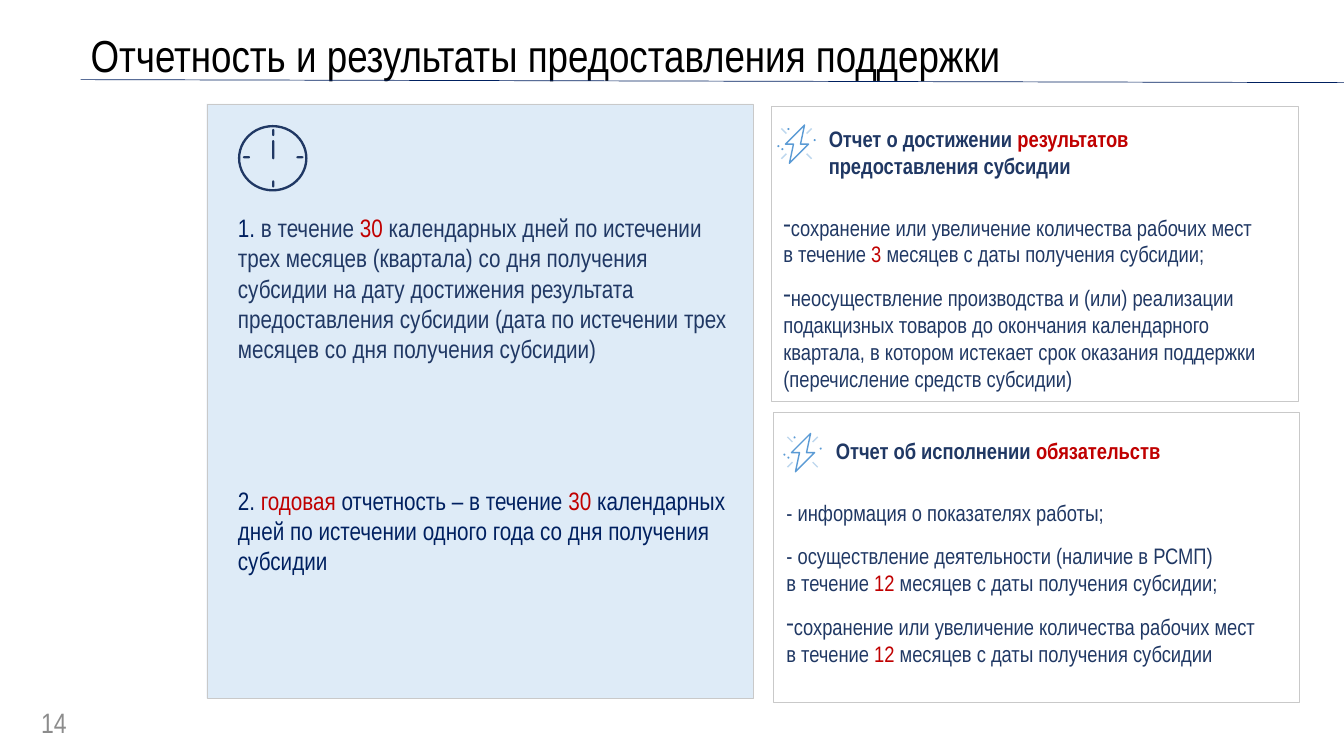
from dataclasses import dataclass

from lxml.etree import SubElement
from pptx import Presentation
from pptx.dml.color import RGBColor
from pptx.enum.shapes import MSO_CONNECTOR, MSO_SHAPE
from pptx.enum.text import MSO_ANCHOR, PP_ALIGN
from pptx.oxml.ns import qn
from pptx.util import Inches, Pt


@dataclass(frozen=True)
class Theme:
    font: str = "Arial Narrow"
    title: str = "000000"
    navy: str = "002060"
    ink: str = "203864"
    accent: str = "C00000"
    number: str = "8C8C8C"
    border: str = "C9C9C9"
    panel: str = "DEEBF7"
    white: str = "FFFFFF"
    bolt: str = "5B9BD5"
    ray: str = "BDD7EE"
    title_size: int = 32
    number_size: int = 20
    term_size: int = 18
    report_size: int = 16


THEME = Theme()
FLUSH = {"margin_left": 0}


def set_all(target, values):
    for name, value in values.items():
        setattr(target, name, value)


def add_solid(slide, preset, box, fill, border=None):
    shape = slide.shapes.add_shape(preset, *map(Inches, box))
    shape.shadow.inherit = False
    shape.fill.solid()
    shape.fill.fore_color.rgb = RGBColor.from_string(fill)
    if border:
        shape.line.color.rgb = RGBColor.from_string(border)
        shape.line.width = Pt(0.25)
    else:
        shape.line.fill.background()
    return shape


def add_line(slide, start, end, color, width):
    line = slide.shapes.add_connector(
        MSO_CONNECTOR.STRAIGHT, *map(Inches, (*start, *end)))
    line.line.color.rgb = RGBColor.from_string(color)
    line.line.width = Pt(width)
    SubElement(line._element.spPr, qn("a:effectLst"))


def add_dash_bullet(paragraph):
    properties = paragraph._p.get_or_add_pPr()
    set_all_xml = {"marL": "0", "indent": "0"}
    for name, value in set_all_xml.items():
        properties.set(name, value)
    SubElement(properties, qn("a:buFontTx"))
    SubElement(properties, qn("a:buChar")).set("char", "-")


def add_runs(paragraph, runs, size, bold):
    for text, color in runs:
        for index, part in enumerate(text.split("\n")):
            if index:
                paragraph.add_line_break()
            run = paragraph.add_run()
            run.text = part
            set_all(run.font, {"name": THEME.font, "size": Pt(size), "bold": bold})
            run.font.color.rgb = RGBColor.from_string(color)


def add_text(slide, box, paragraphs, size, bold=False, frame_format=None,
             paragraph_format=None, bulleted=(), gap=0):
    """Write paragraphs of (text, colour) runs; gap is the space between them."""
    frame = slide.shapes.add_textbox(*map(Inches, box)).text_frame
    set_all(frame, {"word_wrap": True, **(frame_format or {})})
    for index, runs in enumerate(paragraphs):
        paragraph = frame.add_paragraph() if index else frame.paragraphs[0]
        if index in bulleted:
            add_dash_bullet(paragraph)
        if index:
            paragraph.space_before = Pt(gap)
        set_all(paragraph, paragraph_format or {})
        add_runs(paragraph, runs, size, bold)


def add_clock(slide, left, top):
    width, height, stroke = 0.69, 0.66, 0.02
    ring = add_solid(slide, MSO_SHAPE.DONUT, (left, top, width, height), THEME.ink)
    ring.adjustments[0] = 0.035
    ticks_and_hand = [
        (0.34, 0.04, stroke, 0.07), (0.34, 0.55, stroke, 0.07),
        (0.58, 0.31, 0.07, stroke), (0.05, 0.31, 0.07, stroke),
        (0.34, 0.15, stroke, 0.19),
    ]
    for x, y, w, h in ticks_and_hand:
        mark = add_solid(slide, MSO_SHAPE.ROUNDED_RECTANGLE,
                         (left + x, top + y, w, h), THEME.ink)
        mark.adjustments[0] = 0.5


def add_bolt(slide, left, top):
    def place(x, y):
        return left + x, top + y

    corners = [(0.27, 0.01), (0.08, 0.2), (0.16, 0.2),
               (0.12, 0.39), (0.31, 0.2), (0.23, 0.2)]
    points = [tuple(map(Inches, place(*corner))) for corner in corners]
    builder = slide.shapes.build_freeform(*points[0])
    builder.add_line_segments(points[1:], close=True)
    bolt = builder.convert_to_shape()
    bolt.shadow.inherit = False
    bolt.fill.background()
    bolt.line.color.rgb = RGBColor.from_string(THEME.bolt)
    bolt.line.width = Pt(1)

    center_x, center_y = 0.19, 0.195
    for side_x in (-1, 1):
        for side_y in (-1, 1):
            inner, outer = (place(center_x + side_x * reach, center_y + side_y * reach)
                            for reach in (0.1, 0.15))
            add_line(slide, inner, outer, THEME.ray, 1)
    for x, y in [(0.04, 0.24), (0, 0.21), (0.36, 0.15), (0.1, 0.04)]:
        add_solid(slide, MSO_SHAPE.OVAL, (*place(x, y), 0.02, 0.02), THEME.bolt)


def add_report(slide, panel, icon, heading_box, heading, body_box, body, bulleted):
    add_solid(slide, MSO_SHAPE.RECTANGLE, panel, THEME.white, THEME.border)
    add_bolt(slide, *icon)
    add_text(slide, heading_box, [heading], THEME.report_size, bold=True,
             frame_format=FLUSH)
    add_text(slide, body_box, body, THEME.report_size, frame_format=FLUSH,
             bulleted=bulleted, gap=12)


def main():
    prs = Presentation()
    prs.slide_width, prs.slide_height = Inches(13.33), Inches(7.5)
    slide = prs.slides.add_slide(prs.slide_layouts[6])
    navy, ink, accent = THEME.navy, THEME.ink, THEME.accent

    add_text(slide, (0.8, 0.22, 11.5, 0.71),
             [[("Отчетность и результаты предоставления поддержки", THEME.title)]],
             THEME.title_size, frame_format={"vertical_anchor": MSO_ANCHOR.MIDDLE},
             paragraph_format={"line_spacing": 0.9})
    add_line(slide, (0.8, 0.79), (13.33, 0.82), navy, 0.5)

    add_solid(slide, MSO_SHAPE.RECTANGLE, (2.05, 1.03, 5.42, 5.9),
              THEME.panel, THEME.border)
    add_clock(slide, 2.36, 1.24)
    quarter = [
        ("1. ", navy), ("в течение ", ink), ("30", accent),
        (" календарных дней по истечении трех месяцев (квартала) со дня получения "
         "субсидии на дату достижения результата предоставления субсидии (дата по "
         "истечении трех месяцев со дня получения субсидии)", ink)]
    year = [
        ("2. ", navy), ("годовая", accent), (" отчетность – в течение ", navy),
        ("30", accent),
        (" календарных дней по истечении одного года со дня получения субсидии", navy)]
    add_text(slide, (2.36, 2.06, 5.09, 3.43), [quarter, year], THEME.term_size,
             frame_format=FLUSH, gap=86.5)

    jobs = "сохранение или увеличение количества рабочих мест \nв течение "
    add_report(
        slide, (7.65, 1.05, 5.23, 2.93), (7.71, 1.23), (8.22, 1.19, 4, 1.11),
        [("Отчет о достижении ", ink), ("результатов ", accent),
         ("предоставления субсидии", ink)],
        (7.77, 2.07, 5.09, 2.32),
        [[(jobs, ink), ("3 ", accent), ("месяцев с даты получения субсидии;", ink)],
         [("неосуществление производства и (или) реализации подакцизных товаров до "
           "окончания календарного квартала, в котором истекает срок оказания "
           "поддержки (перечисление средств субсидии)", ink)]],
        bulleted=(0, 1))
    add_report(
        slide, (7.67, 4.09, 5.22, 2.88), (7.77, 4.29), (8.29, 4.29, 4, 0.37),
        [("Отчет об исполнении ", ink), ("обязательств", accent)],
        (7.8, 4.9, 5.09, 2.26),
        [[("- информация о показателях работы;", ink)],
         [("- осуществление деятельности (наличие в РСМП) \nв течение ", ink),
          ("12", accent), (" месяцев с даты получения субсидии;", ink)],
         [(jobs, ink), ("12 ", accent), ("месяцев с даты получения субсидии", ink)]],
        bulleted=(2,))

    add_text(slide, (0.22, 6.97, 0.54, 0.4), [[("14", THEME.number)]],
             THEME.number_size, frame_format={"vertical_anchor": MSO_ANCHOR.MIDDLE},
             paragraph_format={"alignment": PP_ALIGN.RIGHT})
    prs.save("out.pptx")


if __name__ == "__main__":
    main()
